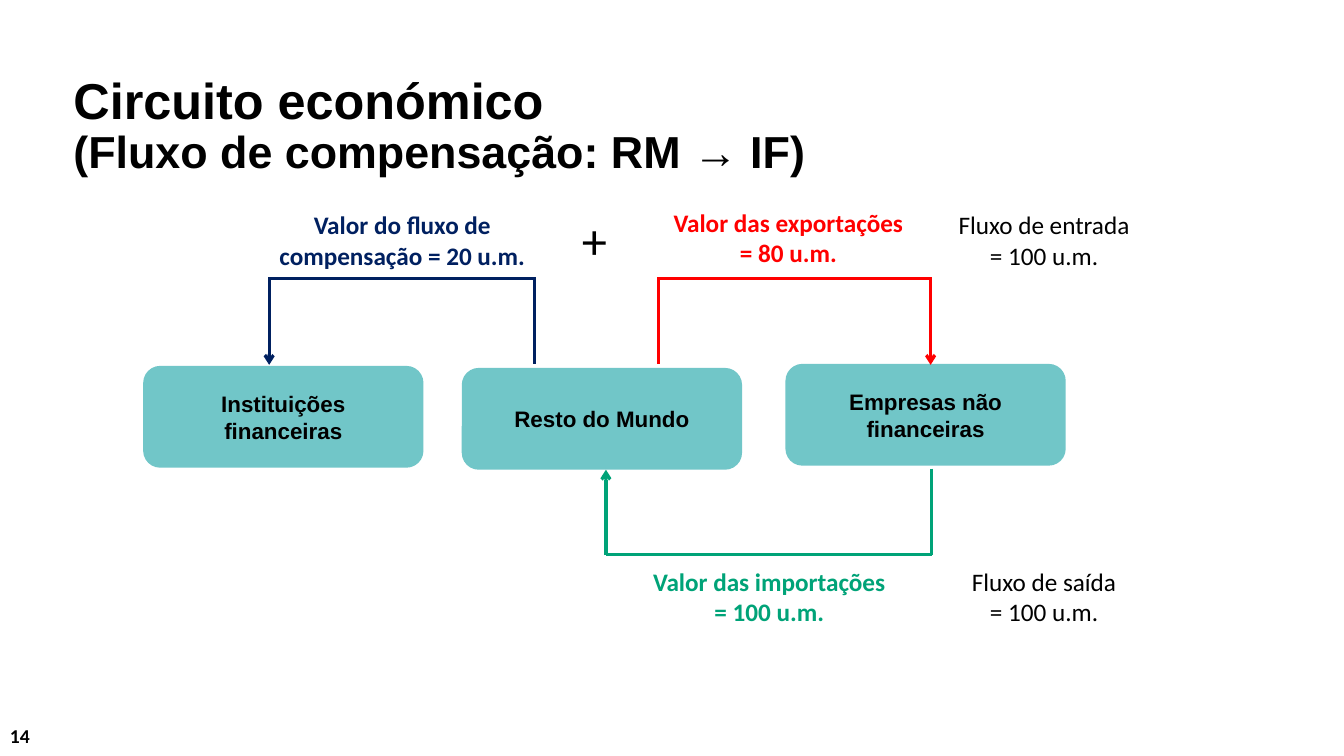
from dataclasses import dataclass

import pptx
import pptx.dml.color
import pptx.enum.shapes
import pptx.enum.text
import pptx.oxml.ns
import pptx.util
from lxml import etree
from pptx.dml.color import RGBColor
from pptx.enum.shapes import MSO_CONNECTOR, MSO_SHAPE
from pptx.enum.text import MSO_ANCHOR, PP_ALIGN
from pptx.util import Inches

BLACK = RGBColor(0x00, 0x00, 0x00)
WHITE = RGBColor(0xFF, 0xFF, 0xFF)
TEAL = RGBColor(0x71, 0xC6, 0xC8)
RED = RGBColor(0xFF, 0x00, 0x00)
GREEN = RGBColor(0x00, 0xA3, 0x78)
NAVY = RGBColor(0x00, 0x20, 0x60)

SECTOR_W, SECTOR_H = 2.78, 1.01


@dataclass
class Sector:
    text: str
    left: float
    top: float


@dataclass
class Flow:
    start: tuple[float, float]
    end: tuple[float, float]
    level: float
    color: RGBColor


@dataclass
class Label:
    text: str
    left: float
    top: float
    width: float
    height: float = 0.71
    color: RGBColor = BLACK
    size: int = 18
    bold: bool = False
    filled: bool = True


SECTORS = [
    Sector("Instituições\nfinanceiras", 1.42, 3.63),
    Sector("Resto do Mundo", 4.58, 3.65),
    Sector("Empresas não\nfinanceiras", 7.79, 3.61),
]
FLOWS = [
    Flow((6.53, 3.61), (9.23, 3.62), 2.76, RED),
    Flow((9.24, 4.65), (6.01, 4.66), 5.5, GREEN),
    Flow((5.3, 3.61), (2.67, 3.62), 2.76, NAVY),
]
LABELS = [
    Label("Valor das exportações\n= 80 u.m.", 6.24, 2.01, 3.16, 0.73, RED, bold=True),
    Label("Valor das importações\n= 100 u.m.", 6.01, 5.57, 3.24, color=GREEN, bold=True),
    Label("Valor do fluxo de compensação = 20 u.m.", 2.64, 2.03, 2.7,
          color=NAVY, bold=True, filled=False),
    Label("+", 5.45, 2.03, 0.89, size=36),
    Label("Fluxo de entrada\n= 100 u.m.", 8.95, 2.03, 2.81),
    Label("Fluxo de saída\n= 100 u.m.", 8.95, 5.57, 2.81, filled=False),
]


def write(sp, text: str, *, size: int, font: str = "Calibri", color: RGBColor = BLACK,
          bold: bool = False, align=PP_ALIGN.CENTER, anchor=MSO_ANCHOR.TOP) -> None:
    tf = sp.text_frame
    tf.word_wrap = True
    tf.vertical_anchor = anchor
    tf.text = text
    for p in tf.paragraphs:
        p.alignment = align
        for r in p.runs:
            r.font.name = font
            r.font.size = pptx.util.Pt(size)
            r.font.bold = bold
            r.font.color.rgb = color


def add_box(s, kind, left: float, top: float, width: float, height: float, fill: RGBColor):
    sp = s.shapes.add_shape(kind, Inches(left), Inches(top), Inches(width), Inches(height))
    sp.shadow.inherit = False
    sp.fill.solid()
    sp.fill.fore_color.rgb = fill
    sp.line.fill.background()
    return sp


def add_text(s, left: float, top: float, width: float, height: float):
    return s.shapes.add_textbox(Inches(left), Inches(top), Inches(width), Inches(height))


def add_sector(s, sector: Sector) -> None:
    sp = add_box(s, MSO_SHAPE.ROUNDED_RECTANGLE, sector.left, sector.top,
                 SECTOR_W, SECTOR_H, TEAL)
    write(sp, sector.text, size=16, font="Arial", bold=True, anchor=MSO_ANCHOR.MIDDLE)


def add_line(s, start: tuple[float, float], end: tuple[float, float],
             color: RGBColor, arrow: bool = False) -> None:
    cxn = s.shapes.add_connector(MSO_CONNECTOR.STRAIGHT, *map(Inches, start + end))
    cxn.line.color.rgb = color
    cxn.line.width = pptx.util.Pt(2.25)
    if arrow:
        ln = cxn.line._get_or_add_ln()
        etree.SubElement(ln, pptx.oxml.ns.qn("a:tailEnd"), type="arrow")
    etree.SubElement(cxn._element.spPr, pptx.oxml.ns.qn("a:effectLst"))


def add_flow(s, flow: Flow) -> None:
    corners = (flow.start[0], flow.level), (flow.end[0], flow.level)
    overlap = 0.01 if flow.level > flow.start[1] else -0.01
    add_line(s, *corners, flow.color)
    add_line(s, flow.start, (corners[0][0], flow.level + overlap), flow.color)
    add_line(s, (corners[1][0], flow.level + overlap), flow.end, flow.color, arrow=True)


def add_label(s, label: Label) -> None:
    place = label.left, label.top, label.width, label.height
    sp = add_box(s, MSO_SHAPE.RECTANGLE, *place, WHITE) if label.filled else add_text(s, *place)
    write(sp, label.text, size=label.size, color=label.color, bold=label.bold)


def add_title(s) -> None:
    sp = add_text(s, 0.63, 0.7, 12.24, 1.32)
    write(sp, "Circuito económico\v(Fluxo de compensação: RM → IF)",
          size=32, font="Arial", bold=True, align=PP_ALIGN.LEFT)
    p = sp.text_frame.paragraphs[0]
    p.line_spacing = 0.9
    p.runs[0].font.size = pptx.util.Pt(36)


def main() -> None:
    prs = pptx.Presentation()
    prs.slide_width, prs.slide_height = Inches(13.33), Inches(7.5)
    s = prs.slides.add_slide(prs.slide_layouts[6])
    add_title(s)
    for sector in SECTORS:
        add_sector(s, sector)
    for flow in FLOWS:
        add_flow(s, flow)
    for label in LABELS:
        add_label(s, label)
    write(add_text(s, 0, 7.1, 3, 0.4), "14", size=14, bold=True,
          align=PP_ALIGN.LEFT, anchor=MSO_ANCHOR.MIDDLE)
    prs.save("out.pptx")


if __name__ == "__main__":
    main()
